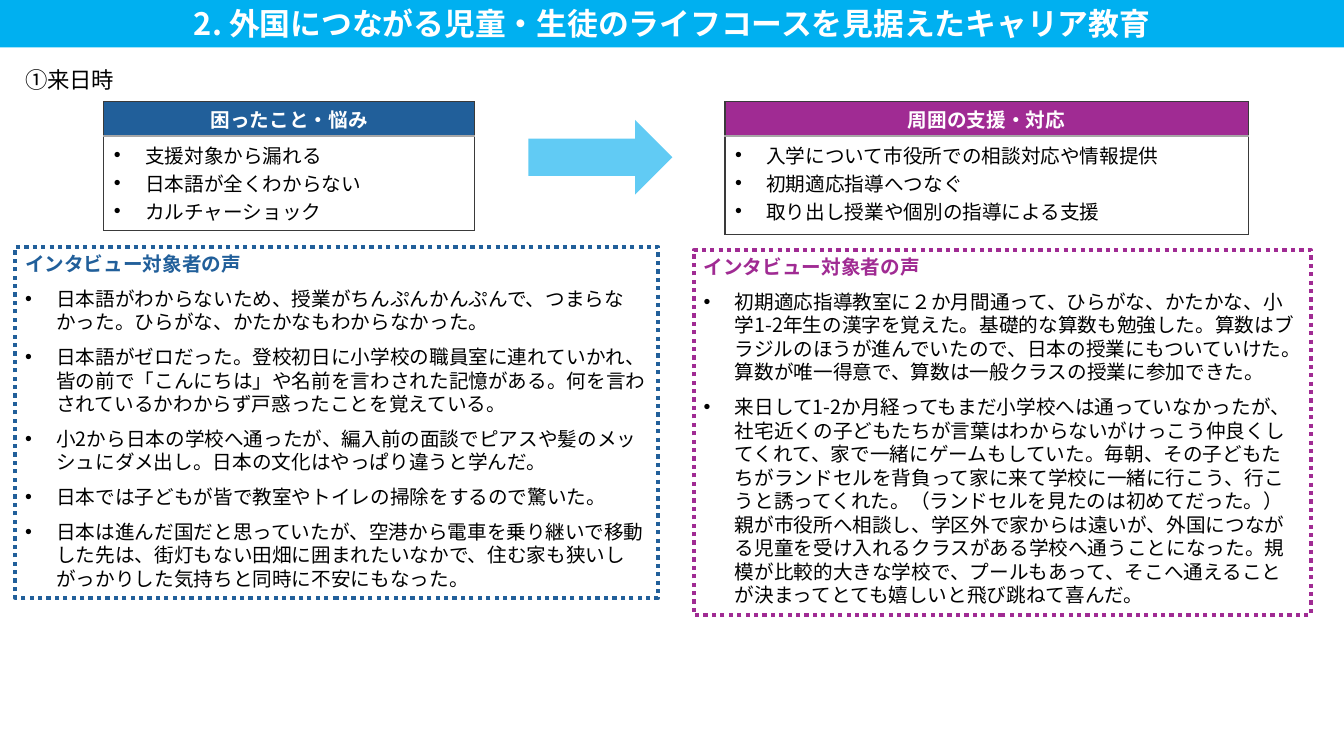
from dataclasses import dataclass

from lxml import etree
from pptx import Presentation
from pptx.dml.color import RGBColor
from pptx.enum.dml import MSO_LINE
from pptx.enum.lang import MSO_LANGUAGE_ID
from pptx.enum.shapes import MSO_SHAPE
from pptx.enum.text import MSO_ANCHOR, PP_ALIGN
from pptx.oxml.ns import qn
from pptx.util import Inches, Pt

RECTANGLE, RIGHT_ARROW = MSO_SHAPE.RECTANGLE, MSO_SHAPE.RIGHT_ARROW
TOP, MIDDLE = MSO_ANCHOR.TOP, MSO_ANCHOR.MIDDLE
LEFT, CENTER = PP_ALIGN.LEFT, PP_ALIGN.CENTER
DOTTED = MSO_LINE.ROUND_DOT
JAPANESE = MSO_LANGUAGE_ID.JAPANESE

FONT = "Noto Sans CJK JP"
BODY_SIZE = 14
LINE_PITCH = 16.8
LIST_PITCH = 20
HEADER_HEIGHT = 0.34
INDENT = 0.31
COLORS = {
    "banner": "00B0F0", "arrow": "61CBF4", "trouble": "215F9A", "support": "A02B93",
    "border": "3A3A3A", "divider": "A6A6A6", "black": "000000", "white": "FFFFFF",
}


@dataclass
class Box:
    left: float
    top: float
    width: float
    height: float

    def lengths(self) -> list:
        return [Inches(n) for n in (self.left, self.top, self.width, self.height)]


@dataclass
class TextStyle:
    size: float = BODY_SIZE
    color: str = "black"
    bold: bool = False
    align: PP_ALIGN = LEFT
    pitch: float = LINE_PITCH
    after: float = 0
    bullet: bool = False


@dataclass
class Summary:
    box: Box
    color: str
    heading: str
    items: list[str]


@dataclass
class Voices:
    box: Box
    color: str
    quotes: list[str]


SUMMARIES = [
    Summary(Box(1.03, 1.01, 3.68, 1.27), "trouble", "困ったこと・悩み",
            ["支援対象から漏れる", "日本語が全くわからない", "カルチャーショック"]),
    Summary(Box(7.19, 1.01, 5.19, 1.32), "support", "周囲の支援・対応",
            ["入学について市役所での相談対応や情報提供", "初期適応指導へつなぐ",
             "取り出し授業や個別の指導による支援"]),
]
VOICES = [
    Voices(Box(0.15, 2.45, 6.38, 3.48), "trouble", [
        "日本語がわからないため、授業がちんぷんかんぷんで、つまらなかった。"
        "ひらがな、かたかなもわからなかった。",
        "日本語がゼロだった。登校初日に小学校の職員室に連れていかれ、"
        "皆の前で「こんにちは」や名前を言わされた記憶がある。"
        "何を言わされているかわからず戸惑ったことを覚えている。",
        "小2から日本の学校へ通ったが、編入前の面談でピアスや髪のメッシュにダメ出し。"
        "日本の文化はやっぱり違うと学んだ。",
        "日本では子どもが皆で教室やトイレの掃除をするので驚いた。",
        "日本は進んだ国だと思っていたが、空港から電車を乗り継いで移動した先は、"
        "街灯もない田畑に囲まれたいなかで、住む家も狭いし"
        "がっかりした気持ちと同時に不安にもなった。",
    ]),
    Voices(Box(6.88, 2.48, 6.12, 3.62), "support", [
        "初期適応指導教室に２か月間通って、ひらがな、かたかな、小学1-2年生の漢字を覚えた。"
        "基礎的な算数も勉強した。算数はブラジルのほうが進んでいたので、"
        "日本の授業にもついていけた。算数が唯一得意で、"
        "算数は一般クラスの授業に参加できた。",
        "来日して1-2か月経ってもまだ小学校へは通っていなかったが、"
        "社宅近くの子どもたちが言葉はわからないがけっこう仲良くしてくれて、"
        "家で一緒にゲームもしていた。毎朝、その子どもたちがランドセルを背負って家に来て"
        "学校に一緒に行こう、行こうと誘ってくれた。（ランドセルを見たのは初めてだった。）"
        "親が市役所へ相談し、学区外で家からは遠いが、"
        "外国につながる児童を受け入れるクラスがある学校へ通うことになった。"
        "規模が比較的大きな学校で、プールもあって、"
        "そこへ通えることが決まってとても嬉しいと飛び跳ねて喜んだ。",
    ]),
]


def rgb(name: str) -> RGBColor:
    return RGBColor.from_string(COLORS[name])


def write(frame, lines: list[tuple[str, TextStyle]]) -> None:
    """Fill a text frame with one paragraph for each line."""
    for index, (text, style) in enumerate(lines):
        paragraph = frame.add_paragraph() if index else frame.paragraphs[0]
        paragraph.alignment = style.align
        paragraph.line_spacing = Pt(style.pitch)
        paragraph.space_after = Pt(style.after)
        if style.bullet:
            properties = paragraph._p.get_or_add_pPr()
            properties.set("marL", str(Inches(INDENT)))
            properties.set("indent", str(-Inches(INDENT)))
            etree.SubElement(properties, qn("a:buFont")).set("typeface", "Arial")
            etree.SubElement(properties, qn("a:buChar")).set("char", "•")
        run = paragraph.add_run()
        run.text = text
        font = run.font
        font.name, font.size, font.bold = FONT, Pt(style.size), style.bold
        font.color.rgb = rgb(style.color)
        font.language_id = JAPANESE
        etree.SubElement(run._r.get_or_add_rPr(), qn("a:ea")).set("typeface", FONT)


def add_block(slide, kind: MSO_SHAPE, box: Box, fill: str | None = None,
              outline: str | None = None):
    shape = slide.shapes.add_shape(kind, *box.lengths())
    shape.shadow.inherit = False
    if fill:
        shape.fill.solid()
        shape.fill.fore_color.rgb = rgb(fill)
    else:
        shape.fill.background()
    if outline:
        shape.line.color.rgb = rgb(outline)
        shape.line.width = Pt(3)
        shape.line.dash_style = DOTTED
    else:
        shape.line.fill.background()
    shape.text_frame.word_wrap = True
    return shape


def style_cell(cell, fill: str, top: str, bottom: str) -> None:
    properties = cell._tc.get_or_add_tcPr()
    for side, color in (("L", "border"), ("R", "border"), ("T", top), ("B", bottom)):
        line = etree.SubElement(properties, qn(f"a:ln{side}"), w=str(Pt(1)))
        solid = etree.SubElement(line, qn("a:solidFill"))
        etree.SubElement(solid, qn("a:srgbClr")).set("val", COLORS[color])
    cell.fill.solid()
    cell.fill.fore_color.rgb = rgb(fill)


def add_summary(slide, summary: Summary) -> None:
    table = slide.shapes.add_table(2, 1, *summary.box.lengths()).table
    table.rows[0].height = Inches(HEADER_HEIGHT)
    table.rows[1].height = Inches(summary.box.height - HEADER_HEIGHT)
    header, body = table.cell(0, 0), table.cell(1, 0)
    style_cell(header, summary.color, "border", "divider")
    style_cell(body, "white", "divider", "border")
    header.margin_top, header.margin_bottom = Inches(0.08), Inches(0.02)
    write(header.text_frame,
          [(summary.heading, TextStyle(color="white", bold=True, align=CENTER))])
    item_style = TextStyle(pitch=LIST_PITCH, bullet=True)
    write(body.text_frame, [(item, item_style) for item in summary.items])


def add_voices(slide, voices: Voices) -> None:
    frame = add_block(slide, RECTANGLE, voices.box, outline=voices.color).text_frame
    frame.vertical_anchor = TOP
    heading = ("インタビュー対象者の声", TextStyle(color=voices.color, bold=True, after=8))
    quote_style = TextStyle(after=8, bullet=True)
    write(frame, [heading] + [(quote, quote_style) for quote in voices.quotes])


def main() -> None:
    presentation = Presentation()
    presentation.slide_width, presentation.slide_height = Inches(13.33), Inches(7.5)
    slide = presentation.slides.add_slide(presentation.slide_layouts[6])

    # Title banner
    banner = add_block(slide, RECTANGLE, Box(0, 0, 13.33, 0.47), fill="banner")
    banner.text_frame.vertical_anchor = MIDDLE
    write(banner.text_frame, [("2. 外国につながる児童・生徒のライフコースを見据えたキャリア教育",
                               TextStyle(22, "white", True, CENTER, 26.4))])

    # Stage label
    label = slide.shapes.add_textbox(*Box(0.15, 0.47, 1.87, 0.44).lengths())
    label.text_frame.word_wrap = True
    write(label.text_frame, [("①来日時", TextStyle(16, pitch=29))])

    # Troubles lead to support
    for summary in SUMMARIES:
        add_summary(slide, summary)
    add_block(slide, RIGHT_ARROW, Box(5.24, 1.19, 1.43, 0.74), fill="arrow")

    # Interview voices
    for voices in VOICES:
        add_voices(slide, voices)

    presentation.save("out.pptx")


if __name__ == "__main__":
    main()
